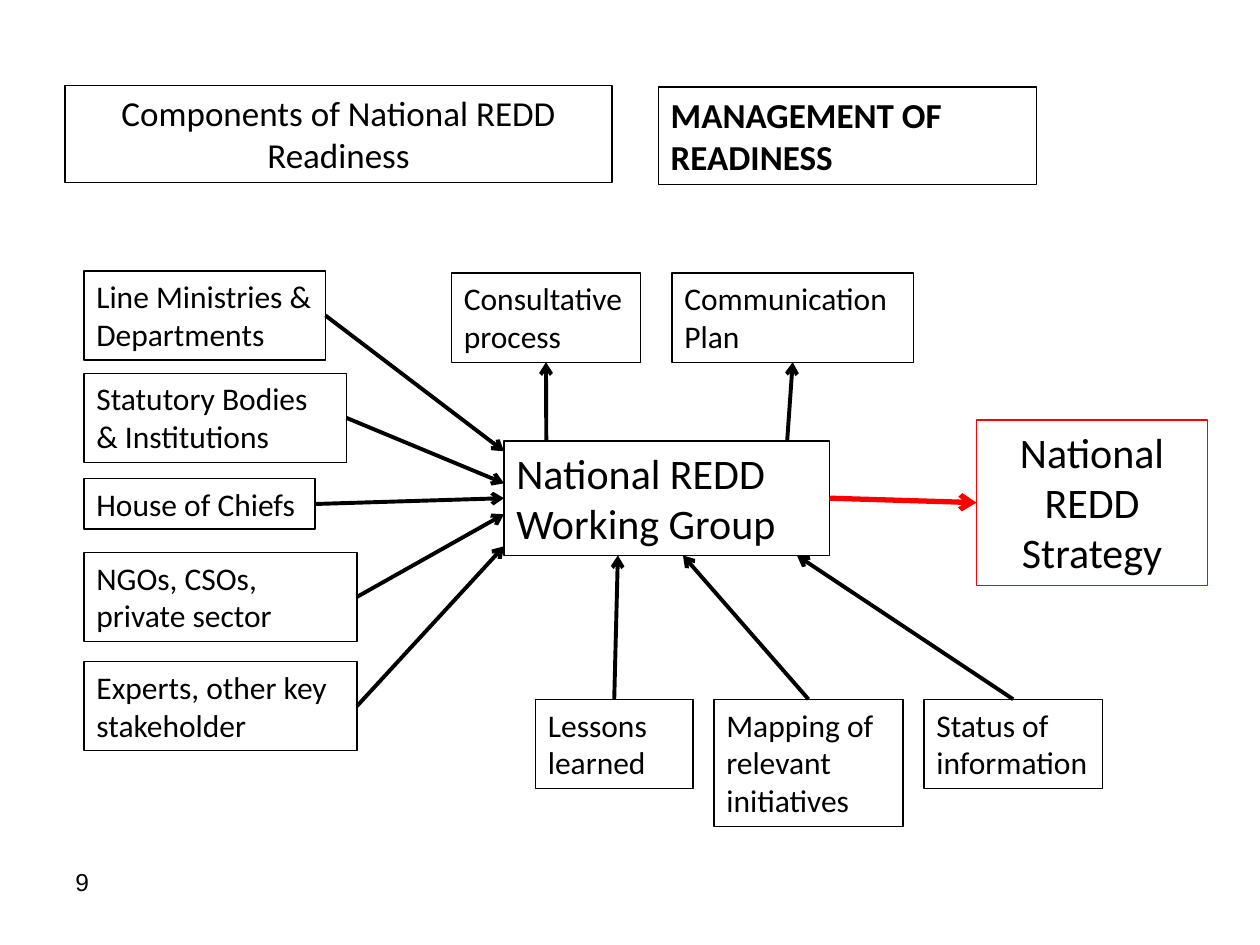
from dataclasses import dataclass

from lxml.etree import SubElement
from pptx import Presentation
from pptx.dml.color import RGBColor
from pptx.enum.shapes import MSO_CONNECTOR, MSO_SHAPE
from pptx.enum.text import MSO_ANCHOR, PP_ALIGN
from pptx.oxml.ns import qn
from pptx.util import Inches, Pt

CELL = 1 / 12  # inches; the page is a grid of 120 columns by 90 rows


@dataclass(frozen=True)
class Theme:
    ink: RGBColor = RGBColor(0, 0, 0)
    accent: RGBColor = RGBColor(255, 0, 0)
    font: str = "Calibri"
    number_font: str = "Arial"
    number: int = 14
    label: int = 18
    title: int = 20
    key: int = 24
    border: float = 0.75
    arrow: float = 2.25
    strong_arrow: float = 3


THEME = Theme()


@dataclass(frozen=True)
class Box:
    left: float
    top: float
    width: float
    height: float

    def point(self, across, down):
        """Grid position at the given shares of the box's width and height."""
        return self.left + across * self.width, self.top + down * self.height

    def inner(self, column, row, width, height):
        """Box whose corner is offset from this box's corner."""
        return Box(self.left + column, self.top + row, width, height)

    def lengths(self):
        return [grid(n) for n in (self.left, self.top, self.width, self.height)]


def grid(cells):
    return Inches(cells * CELL)


def write(shape, text, size=THEME.label, font=THEME.font, bold=False,
          align=PP_ALIGN.LEFT):
    frame = shape.text_frame
    frame.word_wrap = True
    frame.vertical_anchor = MSO_ANCHOR.TOP
    para = frame.paragraphs[0]
    para.alignment = align
    span = para.add_run()
    span.text = text
    span.font.size = Pt(size)
    span.font.name = font
    span.font.bold = bold
    span.font.color.rgb = THEME.ink


def add_card(page, box, text, border=THEME.ink, **text_format):
    card = page.shapes.add_shape(MSO_SHAPE.RECTANGLE, *box.lengths())
    card.shadow.inherit = False
    card.fill.background()
    card.line.color.rgb = border
    card.line.width = Pt(THEME.border)
    write(card, text, **text_format)


def add_arrow(page, start, end, color=THEME.ink, width=THEME.arrow):
    ends = [grid(n) for n in (*start, *end)]
    arrow = page.shapes.add_connector(MSO_CONNECTOR.STRAIGHT, *ends)
    arrow.line.color.rgb = color
    arrow.line.width = Pt(width)
    properties = arrow._element.spPr
    SubElement(properties.find(qn("a:ln")), qn("a:tailEnd"), type="arrow")
    SubElement(properties, qn("a:effectLst"))


def add_header(page, box):
    add_card(page, box.inner(0, 0, 52.1, box.height),
             "Components of National REDD Readiness",
             size=THEME.title, align=PP_ALIGN.CENTER)
    add_card(page, box.inner(56.5, 0.15, 36, box.height),
             "MANAGEMENT OF READINESS", size=THEME.title, bold=True)


def add_stakeholders(page, box, hub):
    """Stack cards whose arrows enter the hub's left side."""
    stakeholders = [  # text, row, width, height, share of the hub's side
        ("Line Ministries & Departments", 0, 23, 8.5, 0.09),
        ("Statutory Bodies & Institutions", 9.75, 25, 8.5, 0.37),
        ("House of Chiefs", 19.8, 22, 4.8, 0.5),
        ("NGOs, CSOs, private sector", 26.8, 26, 8.5, 0.64),
        ("Experts, other key stakeholder", 37.2, 26, 8.5, 0.92),
    ]
    for text, row, width, height, share in stakeholders:
        card = box.inner(0, row, width, height)
        add_card(page, card, text)
        add_arrow(page, card.point(1, 0.5), hub.point(0, share))


def add_inputs(page, box, hub):
    """Line up cards whose arrows enter the hub's lower side."""
    inputs = [  # text, column, width, height, share of the hub's side
        ("Lessons learned", 0, 15, 8.5, 0.35),
        ("Mapping of relevant initiatives", 17, 18, 12.1, 0.55),
        ("Status of information", 37, 17, 8.5, 0.9),
    ]
    for text, column, width, height, share in inputs:
        card = box.inner(column, 0, width, height)
        add_card(page, card, text)
        add_arrow(page, card.point(0.5, 0), hub.point(share, 1))


def add_outputs(page, box, hub):
    """Line up cards reached by arrows from the hub's upper side."""
    outputs = [  # text, column, width, share of the hub's side
        ("Consultative process", 0, 18, 0.13),
        ("Communication Plan", 21, 23, 0.87),
    ]
    for text, column, width, share in outputs:
        card = box.inner(column, 0, width, box.height)
        add_card(page, card, text)
        add_arrow(page, hub.point(share, 0), card.point(0.5, 1))


def add_strategy(page, box, hub):
    add_card(page, box, "National REDD Strategy", border=THEME.accent,
             size=THEME.key, align=PP_ALIGN.CENTER)
    add_arrow(page, hub.point(1, 0.5), box.point(0, 0.5),
              color=THEME.accent, width=THEME.strong_arrow)


def add_page_number(page, box):
    number = page.shapes.add_textbox(*box.lengths())
    write(number, "9", size=THEME.number, font=THEME.number_font)


def main():
    deck = Presentation()
    deck.slide_width, deck.slide_height = grid(120), grid(90)
    page = deck.slides.add_slide(deck.slide_layouts[6])

    hub = Box(48, 42, 31, 10.9)
    add_page_number(page, Box(6, 82, 28, 6.25))
    add_header(page, Box(6.2, 8.15, 92.5, 9.25))
    add_card(page, hub, "National REDD Working Group", size=THEME.key)
    add_stakeholders(page, Box(8, 25.8, 26, 45.7), hub)
    add_inputs(page, Box(51, 66.6, 54, 12.1), hub)
    add_outputs(page, Box(43, 26, 44, 8.5), hub)
    add_strategy(page, Box(93, 40, 22, 15.75), hub)
    deck.save("out.pptx")


if __name__ == "__main__":
    main()
